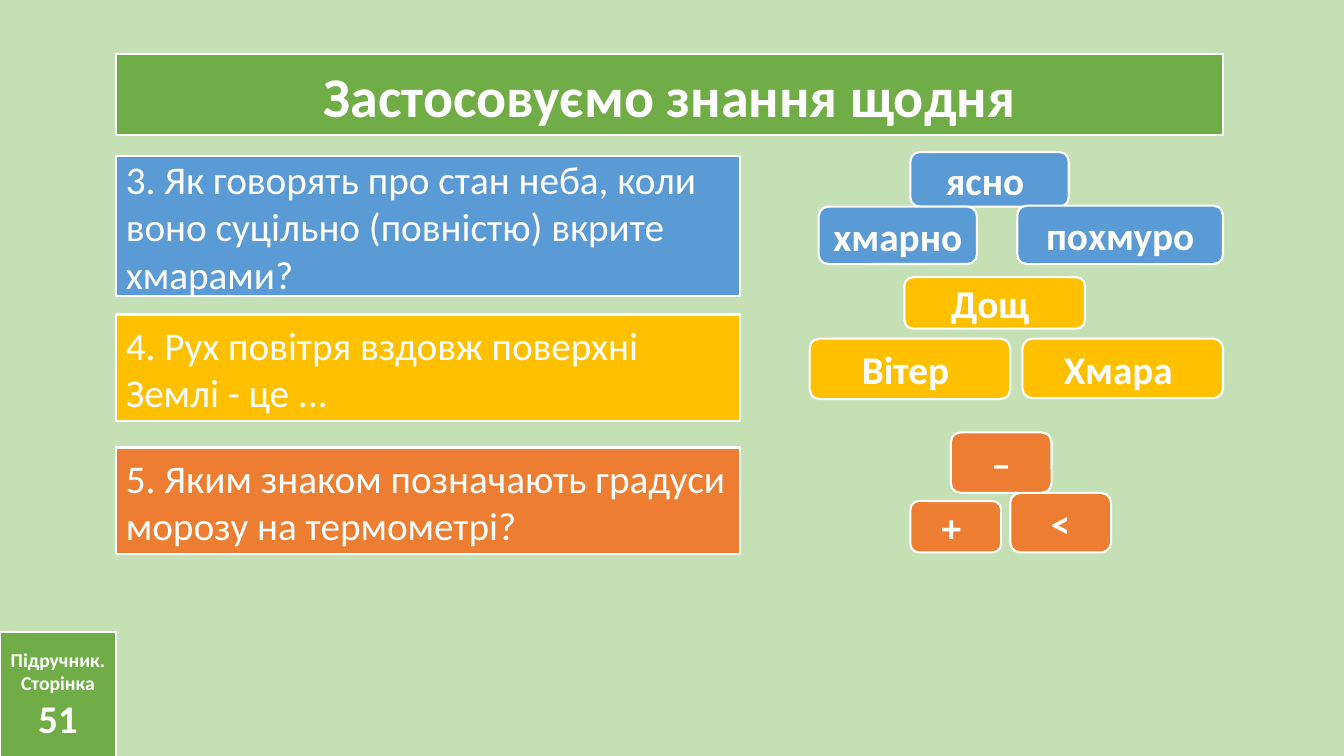
"""Build the weather quiz slide with three questions and their answer choices."""
from pptx import Presentation
from pptx import util as u
from pptx.dml.color import RGBColor
from pptx.enum import shapes, text

WHITE, GREEN, BLUE, YELLOW, ORANGE = "FFFFFF", "70AD47", "5B9BD5", "FFC000", "ED7D31"
LEFT, RIGHT, QUESTION_W = 1.15, 12.13, 6.19
RECT = shapes.MSO_SHAPE.RECTANGLE
ROUND = shapes.MSO_SHAPE.ROUNDED_RECTANGLE


def rgb(value):
    return RGBColor.from_string(value)


def dress(sp, color, lines, bold=True, align=text.PP_ALIGN.CENTER):
    sp.fill.solid()
    sp.fill.fore_color.rgb = rgb(color)
    sp.line.color.rgb = rgb(WHITE)
    sp.line.width = u.Pt(1.5)
    tf = sp.text_frame
    tf.word_wrap = True
    tf.auto_size = text.MSO_AUTO_SIZE.NONE
    tf.vertical_anchor = text.MSO_ANCHOR.MIDDLE
    for i, (words, size) in enumerate(lines):
        p = tf.add_paragraph() if i else tf.paragraphs[0]
        p.alignment = align
        r = p.add_run()
        r.text = words
        r.font.name = "Calibri"
        r.font.size = u.Pt(size)
        r.font.bold = bold
        r.font.color.rgb = rgb(WHITE)


prs = Presentation()
prs.slide_width, prs.slide_height = u.Inches(13.33), u.Inches(7.5)
s = prs.slides.add_slide(prs.slide_layouts[5])
s.background.fill.solid()
s.background.fill.fore_color.rgb = rgb("C5E0B4")

title = s.shapes.title
title.left, title.top = u.Inches(LEFT), u.Inches(0.54)
title.width, title.height = u.Inches(RIGHT - LEFT), u.Inches(0.8)
dress(title, GREEN, [("Застосовуємо знання щодня", 40)])

page = s.shapes.add_shape(RECT, 0, u.Inches(6.27), u.Inches(LEFT), u.Inches(1.24))
page.shadow.inherit = False
dress(page, GREEN, [("Підручник.", 14), ("Сторінка", 14), ("51", 28)])

quiz = [
    (BLUE, 1.55, 1.39,
     "3. Як говорять про стан неба, коли воно суцільно (повністю) вкрите хмарами?",
     [("ясно ", 9.03, 1.51, 1.57, 0.54),
      ("хмарно", 8.12, 2.05, 1.57, 0.57),
      ("похмуро", 10.09, 2.04, 2.04, 0.58)]),
    (YELLOW, 3.12, 1.06,
     "4. Рух повітря вздовж поверхні Землі - це ...",
     [("Дощ ", 8.97, 2.75, 1.79, 0.51),
      ("Хмара ", 10.14, 3.36, 1.99, 0.59),
      ("Вітер ", 8.03, 3.36, 1.99, 0.6)]),
    (ORANGE, 4.44, 1.06,
     "5. Яким знаком позначають градуси морозу на термометрі?",
     [("+ ", 9.03, 4.97, 0.9, 0.51),
      ("<", 10.02, 4.89, 1, 0.59),
      (" – ", 9.43, 4.29, 1, 0.6)]),
]

for color, top, height, question, answers in quiz:
    sp = s.shapes.add_shape(RECT, *map(u.Inches, (LEFT, top, QUESTION_W, height)))
    sp.shadow.inherit = False
    dress(sp, color, [(question, 28)], bold=False, align=text.PP_ALIGN.LEFT)
    for answer, *box in answers:
        sp = s.shapes.add_shape(ROUND, *map(u.Inches, box))
        sp.shadow.inherit = False
        dress(sp, color, [(answer, 28)])

prs.save("out.pptx")
